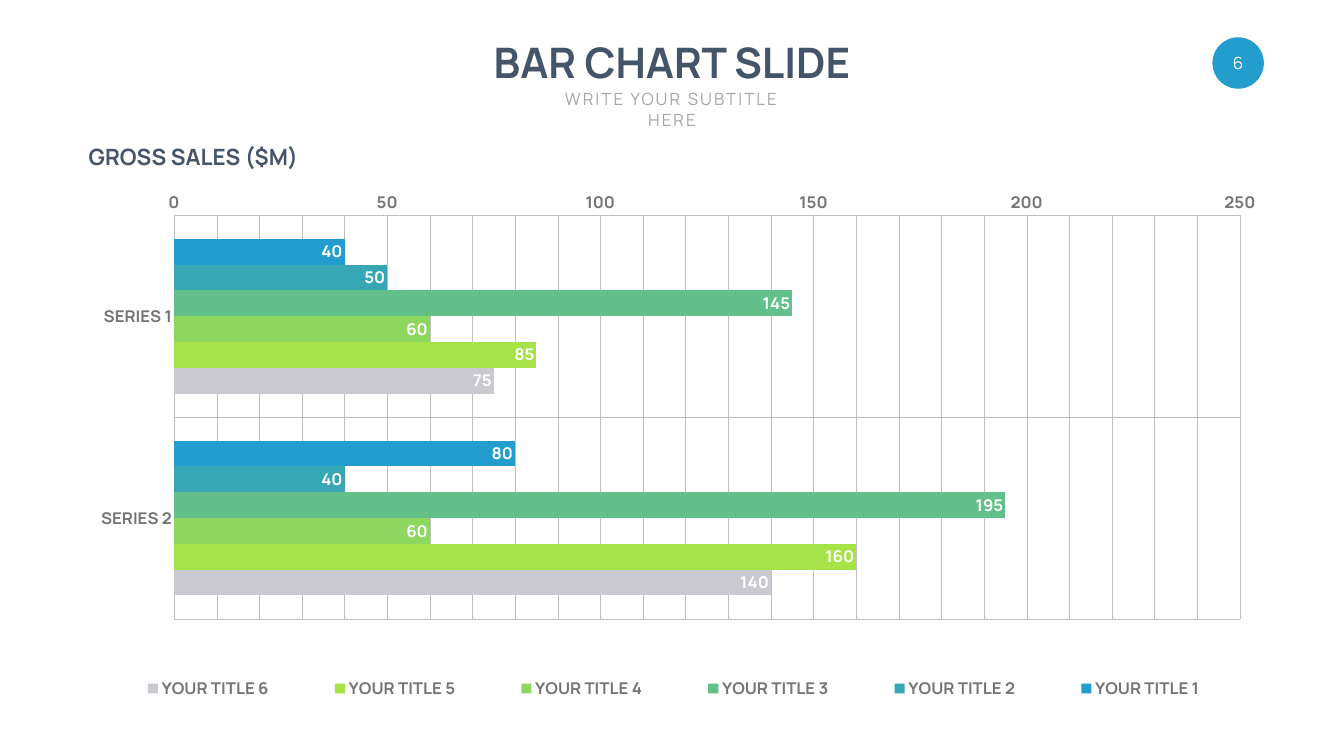
import copy
from dataclasses import dataclass

import pptx
import pptx.chart.data
import pptx.dml.color
import pptx.enum.chart
import pptx.enum.shapes
import pptx.enum.text
import pptx.oxml
import pptx.oxml.ns
import pptx.util

Inches = pptx.util.Inches
Pt = pptx.util.Pt
ALIGN = pptx.enum.text.PP_ALIGN
ANCHOR = pptx.enum.text.MSO_ANCHOR
XL = pptx.enum.chart
qn = pptx.oxml.ns.qn


@dataclass(frozen=True)
class Theme:
    font: str = "Manrope"
    chart_font: str = "Calibri"
    heading: str = "445469"
    subtitle: str = "A6A6A6"
    label: str = "737572"
    grid: str = "BFBFBF"
    white: str = "FFFFFF"
    accent: str = "229DCE"
    title_size: int = 60
    section_size: int = 32
    body_size: int = 24
    chart_size: int = 10


THEME = Theme()

CATEGORIES = ["SERIES 1", "SERIES 2"]
SERIES = [
    ("YOUR TITLE 1", (40, 80), "229DCE"),
    ("YOUR TITLE 2", (50, 40), "37A7B6"),
    ("YOUR TITLE 3", (145, 195), "63C08A"),
    ("YOUR TITLE 4", (60, 60), "8ED75E"),
    ("YOUR TITLE 5", (85, 160), "A5E348"),
    ("YOUR TITLE 6", (75, 140), "CAC9D0"),
]


def rgb(value):
    return pptx.dml.color.RGBColor.from_string(value)


def style_font(font, size=THEME.body_size, color=THEME.label, bold=True, name=THEME.font):
    font.name = name
    font.size = Pt(size)
    font.bold = bold
    font.color.rgb = rgb(color)


def add_text(slide, box, text, size=THEME.body_size, color=THEME.heading, bold=False,
             align=ALIGN.CENTER, anchor=ANCHOR.TOP, margins=(0.1, 0.05), spacing=0):
    sp = slide.shapes.add_textbox(*map(Inches, box))
    tf = sp.text_frame
    tf.word_wrap = True
    tf.vertical_anchor = anchor
    tf.margin_left = tf.margin_right = Inches(margins[0])
    tf.margin_top = tf.margin_bottom = Inches(margins[1])
    p = tf.paragraphs[0]
    p.alignment = align
    r = p.add_run()
    r.text = text
    style_font(r.font, size, color, bold)
    if spacing:
        r.font._element.set("spc", str(spacing * 100))
    return sp


def add_page_number(slide, box, number):
    left, top, width, height = box
    sp = slide.shapes.add_shape(pptx.enum.shapes.MSO_SHAPE.OVAL, *map(Inches, box))
    sp.shadow.inherit = False
    sp.fill.solid()
    sp.fill.fore_color.rgb = rgb(THEME.accent)
    sp.line.fill.background()
    inset = 0.09
    add_text(slide, (left + inset, top + inset, width - 2 * inset, height - 2 * inset),
             number, color=THEME.white, anchor=ANCHOR.MIDDLE, margins=(0, 0))


def add_header(slide, box):
    left, top, width, height = box
    add_text(slide, (left, top, width, 1.11), "BAR CHART SLIDE",
             size=THEME.title_size, bold=True)
    subtitle_width = 5.43
    add_text(slide, (left + (width - subtitle_width) / 2, top + 1.05, subtitle_width, height - 1.05),
             "WRITE YOUR SUBTITLE HERE", color=THEME.subtitle, spacing=3)


def set_layout(parent, x, y, w, h, inner=False):
    for old in parent.findall(qn("c:layout")):
        parent.remove(old)
    target = '<c:layoutTarget val="inner"/>' if inner else ""
    sizes = "".join(f'<c:{tag} val="{val}"/>' for tag, val in zip("xywh", (x, y, w, h)))
    layout = pptx.oxml.parse_xml(
        f'<c:layout {pptx.oxml.ns.nsdecls("c")}><c:manualLayout>{target}'
        f'<c:xMode val="edge"/><c:yMode val="edge"/>{sizes}</c:manualLayout></c:layout>')
    if inner:
        parent.insert(0, layout)
    else:
        parent.find(qn("c:legendPos")).addnext(layout)


def style_axis(axis):
    axis.major_tick_mark = axis.minor_tick_mark = XL.XL_TICK_MARK.NONE
    axis.format.line.fill.background()
    axis.has_major_gridlines = True
    line = axis.major_gridlines.format.line
    line.color.rgb = rgb(THEME.grid)
    line.width = Pt(0.25)
    style_font(axis.tick_labels.font)


def add_minor_gridlines(axis):
    axis.has_minor_gridlines = True
    major = axis._element.find(qn("c:majorGridlines"))
    minor = axis._element.find(qn("c:minorGridlines"))
    minor.append(copy.deepcopy(major.find(qn("c:spPr"))))


def add_sales_chart(slide, box):
    data = pptx.chart.data.CategoryChartData()
    data.categories = CATEGORIES
    for name, values, _ in SERIES:
        data.add_series(name, values)
    chart = slide.shapes.add_chart(
        XL.XL_CHART_TYPE.BAR_CLUSTERED, *map(Inches, box), data).chart
    chart.has_title = False
    style_font(chart.font, THEME.chart_size, bold=False, name=THEME.chart_font)

    categories, values = chart.category_axis, chart.value_axis
    for axis in (categories, values):
        style_axis(axis)
    categories.reverse_order = True
    categories.crosses = XL.XL_AXIS_CROSSES.MAXIMUM
    values.minimum_scale, values.maximum_scale = 0, 250
    values.major_unit, values.minor_unit = 50, 10
    add_minor_gridlines(values)

    plot = chart.plots[0]
    plot.gap_width = 182
    plot.overlap = 0
    plot.vary_by_categories = False
    for series, (_, _, color) in zip(plot.series, SERIES):
        series.format.fill.solid()
        series.format.fill.fore_color.rgb = rgb(color)
        labels = series.data_labels
        labels.show_value = True
        labels.position = XL.XL_LABEL_POSITION.INSIDE_END
        style_font(labels.font, color=THEME.white)

    chart.has_legend = True
    legend = chart.legend
    legend.position = XL.XL_LEGEND_POSITION.BOTTOM
    legend.include_in_layout = False
    style_font(legend.font)
    set_layout(legend._element, 0, 0.91, 1, 0.08)
    plot_area = chart._chartSpace.find(".//" + qn("c:plotArea"))
    set_layout(plot_area, 0.074, 0.01, 0.909, 0.802, inner=True)


def main():
    prs = pptx.Presentation()
    prs.slide_width, prs.slide_height = Inches(26.66), Inches(15)
    slide = prs.slides.add_slide(prs.slide_layouts[6])
    add_page_number(slide, (24.05, 0.74, 1.02, 1.02), "6")
    add_header(slide, (9.61, 0.67, 7.44, 1.55))
    add_sales_chart(slide, (1.73, 3.79, 23.26, 10.37))
    add_text(slide, (1.66, 2.79, 4.4, 0.64), "GROSS SALES ($M)",
             size=THEME.section_size, bold=True, align=ALIGN.LEFT)
    prs.save("out.pptx")


if __name__ == "__main__":
    main()
